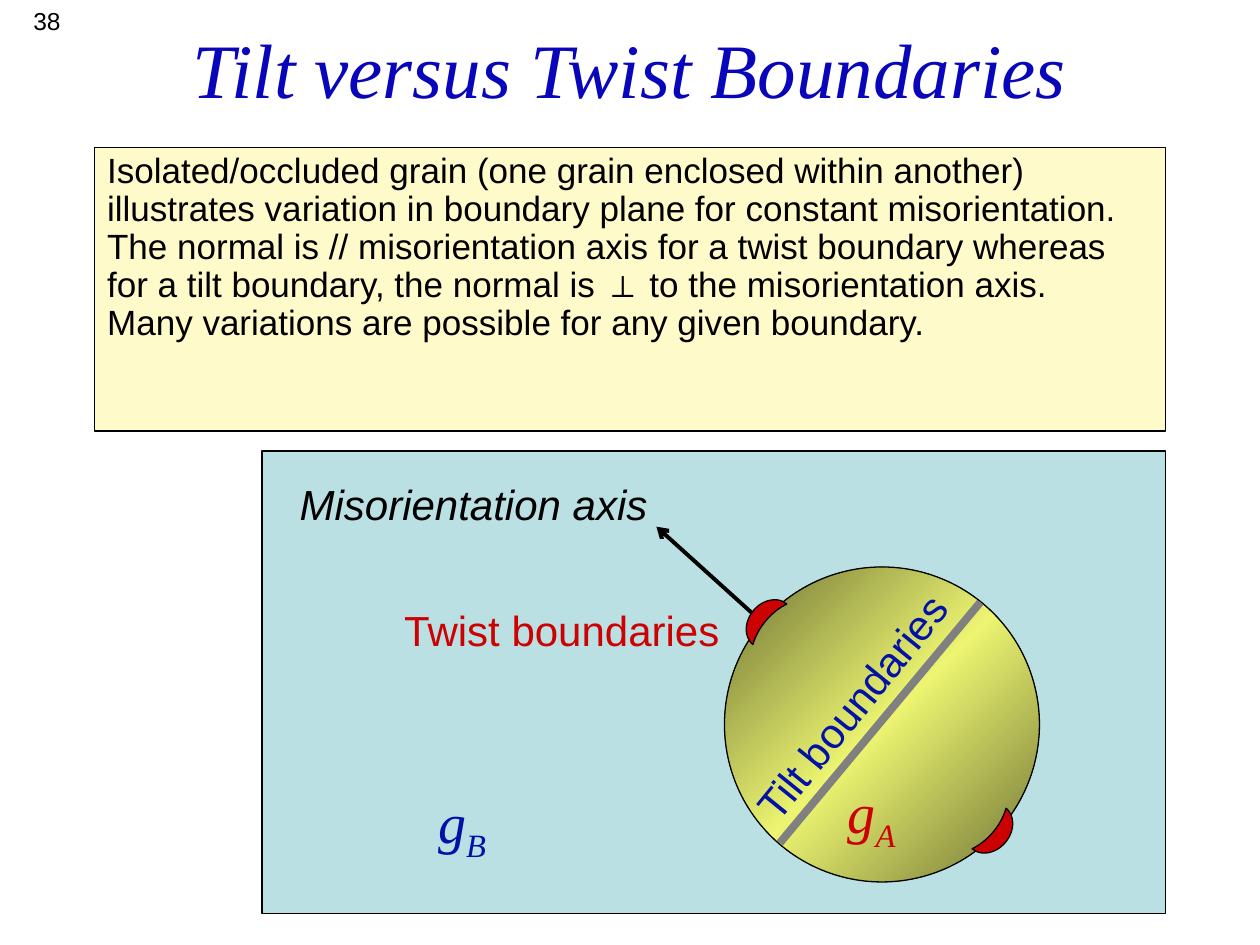
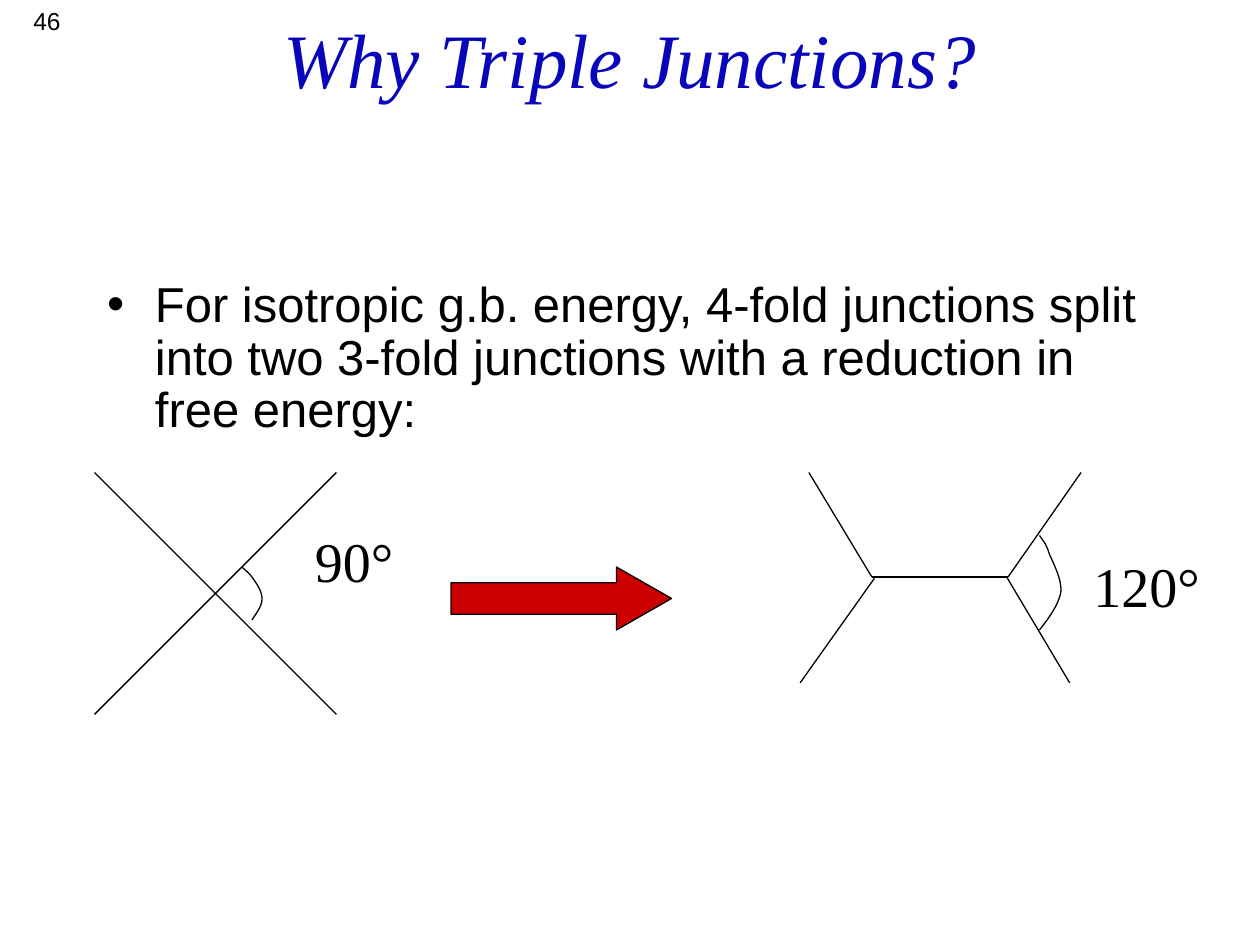
from copy import deepcopy

from lxml.etree import SubElement as sub_tag
from pptx import Presentation
from pptx.dml.color import RGBColor
from pptx.enum.shapes import MSO_CONNECTOR as LINK, MSO_SHAPE as FORM
from pptx.enum.text import MSO_ANCHOR as ANCHOR, MSO_AUTO_SIZE as FIT, PP_ALIGN as ALIGN
from pptx.oxml.ns import qn
from pptx.util import Pt

SCALE = 9144
SANS, SERIF = "Arial", "Times New Roman"
BLACK, TITLE, BLUE, RED = "000000", "0805BA", "0211A6", "CC0202"
GRAY, CREAM, AQUA, ARROW = "808080", "FFFAC9", "BBE0E3", "CC0000"
DARK, LIGHT = "6D7134", "ECF471"


def px(*nums):
    """Turn px lengths into EMU."""
    return [round(num * SCALE) for num in nums]


def tint(code):
    """Turn a hex string into a colour."""
    return RGBColor.from_string(code)


def edge(item, color=BLACK, width=0.75):
    """Set the outline of a shape or line."""
    item.line.color.rgb = tint(color)
    item.line.width = Pt(width)


def write(frame, text, size=24, face=SANS, color=BLACK, slant=False, align=ALIGN.LEFT, sub=""):
    """Write text, with an optional subscript, in the first paragraph."""
    para = frame.paragraphs[0]
    para.alignment = align
    para.space_before = Pt(0)
    for part in filter(None, (text, sub)):
        run = para.add_run()
        run.text = part
        font = run.font
        font.size, font.name, font.italic = Pt(size), face, slant
        font.color.rgb = tint(color)
    if sub:
        font._element.set("baseline", "-25000")
    return para


def label(slide, text, left, top, width, height, turn=0, wrap=False, **style):
    """Add a text box."""
    box = slide.shapes.add_textbox(*px(left, top, width, height))
    box.rotation = turn
    box.text_frame.word_wrap = wrap
    box.text_frame.auto_size = FIT.NONE if wrap else FIT.SHAPE_TO_FIT_TEXT
    write(box.text_frame, text, **style)


def place(item, left, top, width, height):
    """Move and size a placeholder, and return its text frame."""
    item.left, item.top, item.width, item.height = px(left, top, width, height)
    item.text_frame.auto_size = FIT.NONE
    return item.text_frame


def start(deck, title, number, height):
    """Add a slide with its title and number."""
    slide = deck.slides.add_slide(deck.slide_layouts[1])
    frame = place(slide.shapes.title, 75, 0, 850, height)
    frame.vertical_anchor = ANCHOR.MIDDLE
    write(frame, title, size=44, face=SERIF, color=TITLE, slant=True, align=ALIGN.CENTER)
    label(slide, number, 0, 0, 58, 33, wrap=True, size=14, align=ALIGN.RIGHT)
    return slide


def fill_body(slide, text, spot, size, indent=0):
    """Fill the body, with a bullet if it has an indent."""
    body = slide.placeholders[1]
    para = write(place(body, *spot), text, size=size)
    props = para._p.get_or_add_pPr()
    inset = px(indent)[0]
    props.set("marL", str(inset))
    props.set("indent", str(-inset))
    if indent:
        sub_tag(props, qn("a:buChar"), char="•")
    else:
        sub_tag(props, qn("a:buNone"))
    para.line_spacing = 0.9
    return body


def shape(slide, form, left, top, width, height, fill=None, turn=0, knobs=()):
    """Add an outlined preset shape."""
    item = slide.shapes.add_shape(form, *px(left, top, width, height))
    item.shadow.inherit = False
    item.rotation = turn
    for i, knob in enumerate(knobs):
        item.adjustments[i] = knob
    if fill:
        item.fill.solid()
        item.fill.fore_color.rgb = tint(fill)
    edge(item)
    return item


def blend(item, colors):
    """Fill a shape with evenly spaced diagonal colours."""
    item.fill.gradient()
    item.fill.gradient_angle = 315
    stops = item._element.spPr.find(qn("a:gradFill")).find(qn("a:gsLst"))
    while len(stops) < len(colors):
        stops.append(deepcopy(stops[0]))
    for i, (stop, color) in enumerate(zip(item.fill.gradient_stops, colors)):
        stop.position = i / (len(colors) - 1)
        stop.color.rgb = tint(color)


def line(slide, x1, y1, x2, y2, color=BLACK, width=0.75, head=False):
    """Add a line, with an optional arrowhead at its start."""
    item = slide.shapes.add_connector(LINK.STRAIGHT, *px(x1, y1, x2, y2))
    edge(item, color, width)
    if head:
        sub_tag(item.line._get_or_add_ln(), qn("a:headEnd"), type="arrow")
    sub_tag(item._element.spPr, qn("a:effectLst"))


def bend(a, b, c, d, steps=12):
    """List the points along one cubic curve after its start."""
    times = [i / steps for i in range(1, steps + 1)]
    return [
        px(*((1 - t) ** 3 * p + 3 * t * (1 - t) ** 2 * q + 3 * t * t * (1 - t) * r + t ** 3 * s
             for p, q, r, s in zip(a, b, c, d)))
        for t in times
    ]


def arc(slide, knots):
    """Draw an angle mark through chained cubic curves."""
    pen = slide.shapes.build_freeform(*px(*knots[0]))
    for i in range(0, len(knots) - 1, 3):
        pen.add_line_segments(bend(*knots[i:i + 4]), close=False)
    item = pen.convert_to_shape()
    item.shadow.inherit = False
    item.fill.background()
    edge(item)


def draw_grain(deck):
    """Build the slide on tilt and twist boundaries."""
    slide = start(deck, "Tilt versus Twist Boundaries", "38", 108)
    body = fill_body(
        slide,
        "Isolated/occluded grain (one grain enclosed within another) illustrates variation in "
        "boundary plane for constant misorientation.  The normal is // misorientation axis for a "
        "twist boundary whereas for a tilt boundary, the normal is ⊥ to the misorientation axis.  "
        "Many variations are possible for any given boundary.",
        (75, 117, 850, 225), 20)
    body.fill.solid()
    body.fill.fore_color.rgb = tint(CREAM)
    edge(body)
    shape(slide, FORM.RECTANGLE, 208, 358, 717, 367, AQUA)
    blend(shape(slide, FORM.OVAL, 575, 450, 250, 250), (DARK, LIGHT, DARK))
    line(slide, 521, 418, 604, 493, width=2.25, head=True)
    line(slide, 778, 478, 619, 669, GRAY, 4.5)
    for left, top, turn in ((596, 469, 39.9), (783, 642, 219.9)):
        shape(slide, FORM.MOON, left, top, 17, 42, RED, turn, (0.75,))
    label(slide, "Tilt boundaries", 557, 535, 239, 50, turn=309, color=BLUE)
    label(slide, "Twist boundaries", 311, 475, 272, 50, color=RED)
    label(slide, "Misorientation axis", 228, 375, 296, 50, slant=True)
    for sub, left, top, color in (("A", 663, 612, RED), ("B", 338, 620, BLUE)):
        label(slide, "g", left, top, 60, 63, size=32, face=SERIF, color=color, slant=True, sub=sub)


def draw_split(deck):
    """Build the slide on triple junctions."""
    slide = start(deck, "Why Triple Junctions?", "46", 92)
    fill_body(
        slide,
        "For isotropic g.b. energy, 4-fold junctions split into two 3-fold junctions "
        "with a reduction in free energy:",
        (75, 217, 850, 125), 28, 38)
    cross = ((75, 375, 267, 567), (75, 567, 267, 375))
    pair = ((692, 458, 800, 458), (800, 458, 858, 375), (635, 542, 694, 459),
            (692, 458, 642, 375), (849, 542, 799, 458))
    for ends in cross + pair:
        line(slide, *ends)
    shape(slide, FORM.RIGHT_ARROW, 358, 450, 175, 50, ARROW, knobs=(0.5, 0.875))
    arc(slide, ((192, 450), (194, 452), (197, 454), (200, 458), (203, 462),
                (208, 469), (208, 475), (208, 481), (204, 486), (200, 492)))
    arc(slide, ((825, 425), (828, 429), (831, 433), (833, 440), (836, 447),
                (843, 460), (842, 470), (840, 480), (833, 490), (825, 500)))
    for text, left, top, width in (("90°", 240, 413, 82), ("120°", 858, 433, 105)):
        label(slide, text, left, top, width, 63, size=32, face=SERIF)


def main():
    """Build and save the deck."""
    deck = Presentation()
    deck.slide_width, deck.slide_height = px(1000, 750)
    draw_grain(deck)
    draw_split(deck)
    deck.save("out.pptx")


if __name__ == "__main__":
    main()
